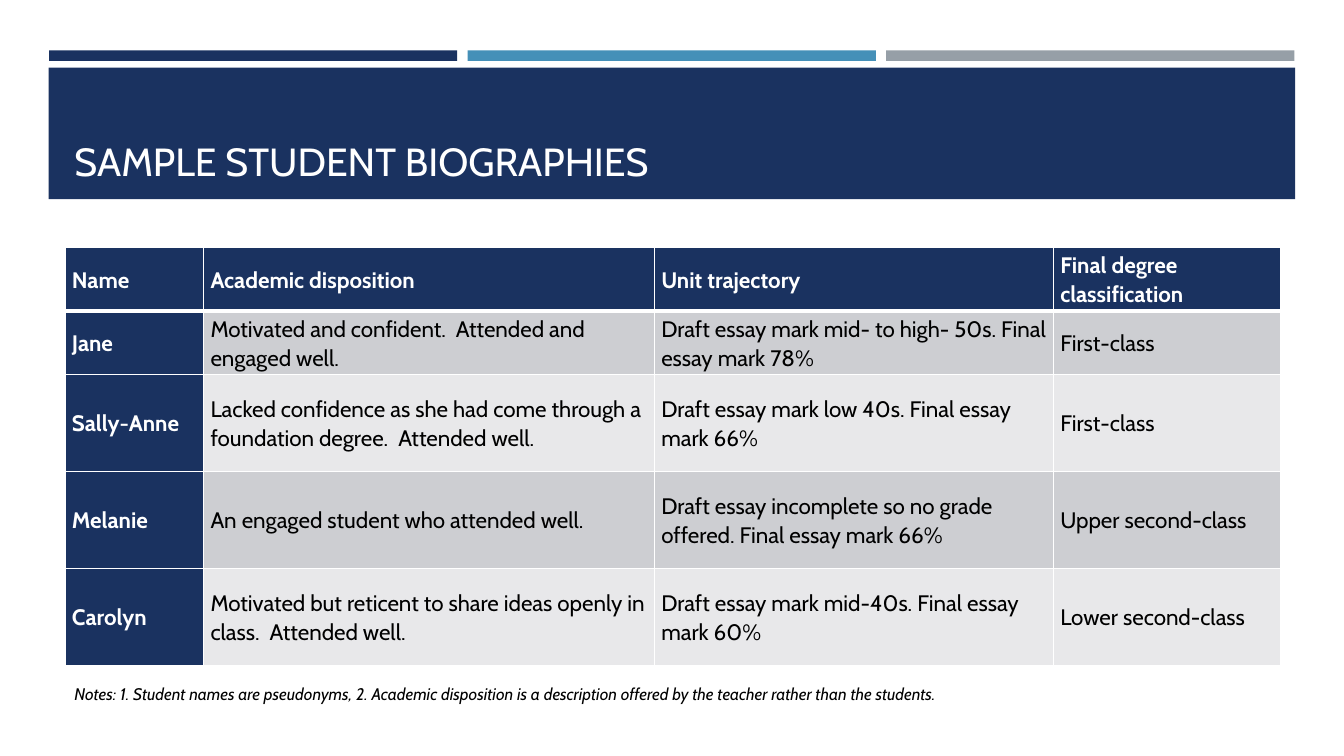
"""Build the slide of sample student biographies."""
from lxml.etree import SubElement
from pptx import Presentation
from pptx.dml.color import RGBColor
from pptx.enum.shapes import MSO_SHAPE
from pptx.enum.text import MSO_ANCHOR
from pptx.oxml.ns import qn
from pptx.util import Pt

HUES = {"navy": "1A3260", "blue": "4590B8", "gray": "969FA7", "white": "FFFFFF",
        "black": "000000", "dark": "CDCED2", "light": "E8E8EA"}


def write(frame, text, size, hue, **style):
    """Put text in a frame and style its one run."""
    frame.word_wrap = True
    para = frame.paragraphs[0]
    run = para.add_run()
    run.text = text
    for key, value in {"name": "Cabin", "size": Pt(size), **style}.items():
        setattr(run.font, key, value)
    run.font.color.rgb = RGBColor.from_string(HUES[hue])
    return para


def block(left, top, width, height, hue):
    """Draw a plain filled rectangle."""
    shape = slide.shapes.add_shape(
        MSO_SHAPE.RECTANGLE, Pt(left), Pt(top), Pt(width), Pt(height))
    shape.shadow.inherit = False
    shape.fill.solid()
    shape.fill.fore_color.rgb = RGBColor.from_string(HUES[hue])
    shape.line.fill.background()


deck = Presentation()
deck.slide_width, deck.slide_height = Pt(960), Pt(540)
slide = deck.slides.add_slide(deck.slide_layouts[6])

for i, hue in enumerate(["navy", "blue", "gray"]):
    block(35 + 299 * i, 36, 291.6, 7.5, hue)
block(34.8, 48.4, 890.4, 93.8, "navy")

title = slide.shapes.add_textbox(Pt(46), Pt(55.4), Pt(868), Pt(80)).text_frame
title.vertical_anchor = MSO_ANCHOR.BOTTOM
write(title, "SAMPLE STUDENT BIOGRAPHIES", 28, "white")

rows = [
    ["Name", "Academic disposition", "Unit trajectory", "Final degree classification"],
    ["Jane", "Motivated and confident.  Attended and engaged well.",
     "Draft essay mark mid- to high- 50s. Final essay mark 78%", "First-class"],
    ["Sally-Anne",
     "Lacked confidence as she had come through a foundation degree.  Attended well.",
     "Draft essay mark low 40s. Final essay mark 66%", "First-class"],
    ["Melanie", "An engaged student who attended well.",
     "Draft essay incomplete so no grade offered. Final essay mark 66%",
     "Upper second-class"],
    ["Carolyn",
     "Motivated but reticent to share ideas openly in class.  Attended well.",
     "Draft essay mark mid-40s. Final essay mark 60%", "Lower second-class"],
]
wide = [99, 322, 285, 162.5]
tall = [45.4, 45.4, 69.2, 69.2, 69.2]
table = slide.shapes.add_table(
    len(rows), len(wide), Pt(46.4), Pt(176.8), Pt(sum(wide)), Pt(sum(tall))).table
for col, width in zip(table.columns, wide):
    col.width = Pt(width)
for row, height in zip(table.rows, tall):
    row.height = Pt(height)

cell_look = {"vertical_anchor": MSO_ANCHOR.MIDDLE, "margin_left": Pt(5),
             "margin_right": Pt(5), "margin_top": 0, "margin_bottom": 0}
para_look = {"line_spacing": 1.07, "space_after": Pt(8)}
for r, row in enumerate(rows):
    for c, text in enumerate(row):
        cell = table.cell(r, c)
        head = r == 0 or c == 0
        for key, value in cell_look.items():
            setattr(cell, key, value)
        para = write(cell.text_frame, text, 16, "white" if head else "black", bold=head)
        for key, value in para_look.items():
            setattr(para, key, value)
        props = cell._tc.get_or_add_tcPr()
        for side in ["L", "R", "T", "B"]:
            thick = (r, side) in [(0, "B"), (1, "T")]
            edge = SubElement(props, qn(f"a:ln{side}"), w=str(Pt(3 if thick else 1)))
            fill = SubElement(edge, qn("a:solidFill"))
            SubElement(fill, qn("a:srgbClr"), val=HUES["white"])
        cell.fill.solid()
        tone = "navy" if head else "dark" if r % 2 else "light"
        cell.fill.fore_color.rgb = RGBColor.from_string(HUES[tone])

notes = slide.shapes.add_textbox(Pt(46), Pt(484.6), Pt(868), Pt(21.8)).text_frame
write(notes, "Notes: 1. Student names are pseudonyms, 2. Academic disposition is a "
      "description offered by the teacher rather than the students.",
      12, "black", italic=True)

deck.save("out.pptx")
